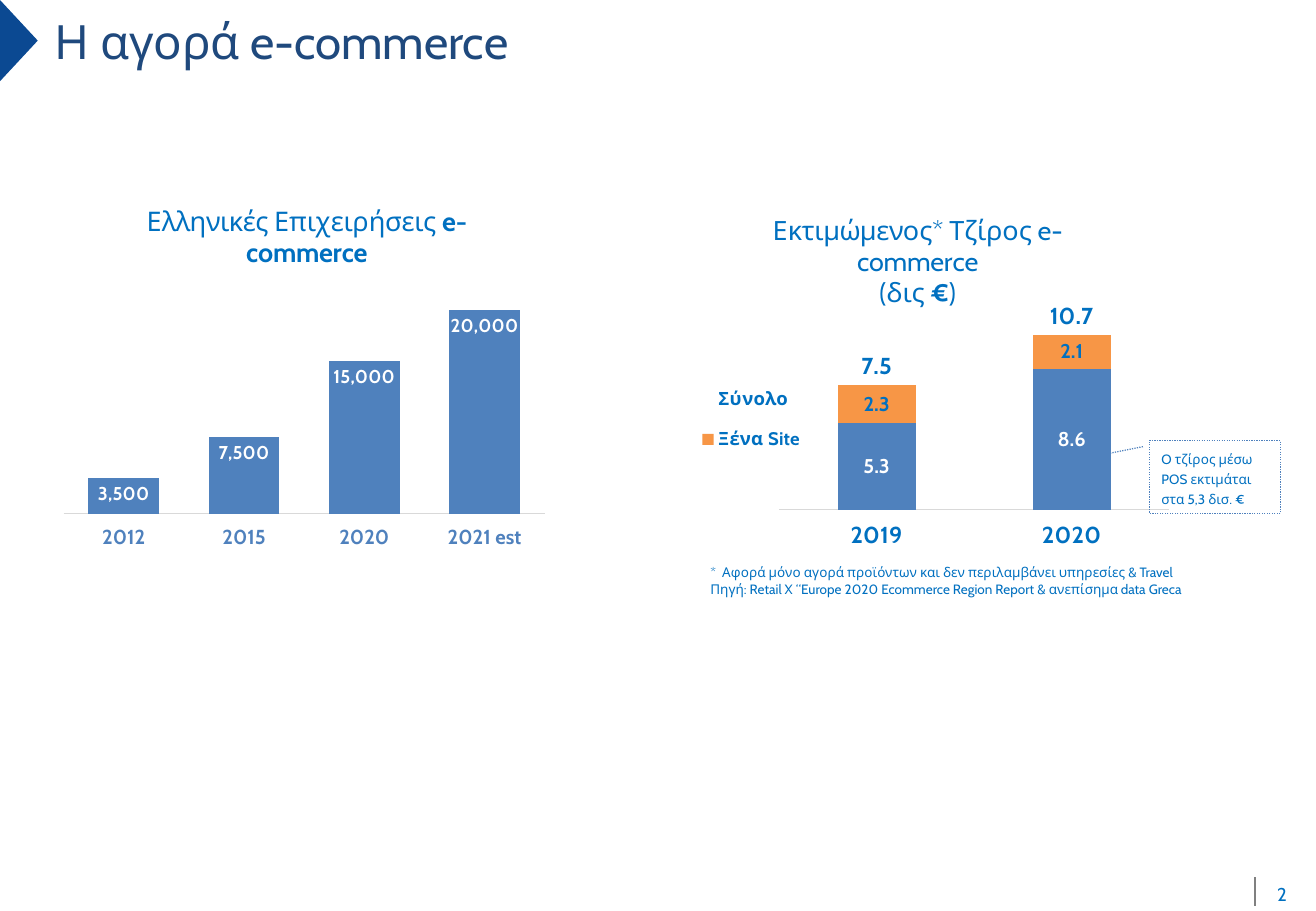
from dataclasses import dataclass

from lxml import etree
from pptx import Presentation
from pptx.chart.data import CategoryChartData
from pptx.dml.color import RGBColor as RGB
from pptx.enum.chart import XL_CHART_TYPE as CT
from pptx.enum.chart import XL_LABEL_POSITION as LABEL
from pptx.enum.chart import XL_LEGEND_POSITION as LEGEND
from pptx.enum.chart import XL_TICK_LABEL_POSITION as TICK_LABEL
from pptx.enum.chart import XL_TICK_MARK as TICK
from pptx.enum.dml import MSO_LINE
from pptx.enum.shapes import MSO_CONNECTOR, MSO_SHAPE
from pptx.enum.text import MSO_ANCHOR, PP_ALIGN
from pptx.oxml.ns import qn
from pptx.util import Cm, Pt


@dataclass(frozen=True)
class Theme:
    font: str = "Cabin"
    navy: RGB = RGB(0x1F, 0x49, 0x7D)
    arrow: RGB = RGB(0x0B, 0x49, 0x92)
    text: RGB = RGB(0x00, 0x70, 0xC0)
    bar: RGB = RGB(0x4F, 0x81, 0xBD)
    orange: RGB = RGB(0xF7, 0x96, 0x46)
    axis: RGB = RGB(0xD9, 0xD9, 0xD9)
    rule: RGB = RGB(0x80, 0x80, 0x80)
    white: RGB = RGB(0xFF, 0xFF, 0xFF)
    title: int = 28
    chart_title: int = 16
    total: int = 14
    category: int = 12
    body: int = 11
    note: int = 8


T = Theme()


def style(font, size, color, bold=False):
    font.name, font.size, font.bold = T.font, Pt(size), bold
    font.color.rgb = color


def add_text(s, box, lines, size, color, align=PP_ALIGN.LEFT, insets=True):
    tf = s.shapes.add_textbox(*map(Cm, box)).text_frame
    tf.word_wrap = True
    if not insets:
        tf.margin_left = tf.margin_top = tf.margin_right = tf.margin_bottom = 0
    for i, line in enumerate(lines):
        p = tf.paragraphs[0] if i == 0 else tf.add_paragraph()
        p.text, p.alignment = line, align
        style(p.font, size, color)


def place(part, inner=False, **fractions):
    """Give a chart part a manual layout in fractions of the chart."""
    for old in part.findall(qn("c:layout")):
        part.remove(old)
    layout = etree.Element(qn("c:layout"))
    manual = etree.SubElement(layout, qn("c:manualLayout"))
    settings = {"layoutTarget": "inner"} if inner else {}
    settings |= {"xMode": "edge", "yMode": "edge"} | fractions
    for name, value in settings.items():
        etree.SubElement(manual, qn(f"c:{name}")).set("val", str(value))
    overlay = part.find(qn("c:overlay"))
    if overlay is None:
        part.insert(0, layout)
    else:
        overlay.addprevious(layout)


def add_columns(s, box, kind, categories, series, title, fmt, gap, plot_box, axis_font):
    """Add a column chart; series rows are name, values, fill, label size, label colour, label position."""
    data = CategoryChartData()
    data.categories = categories
    for name, values, *_ in series:
        data.add_series(name, values)
    chart = s.shapes.add_chart(kind, *map(Cm, box), data).chart
    style(chart.font, T.body, T.text)
    chart.has_legend = False

    chart.has_title = True
    tf = chart.chart_title.text_frame
    for i, runs in enumerate(title):
        p = tf.paragraphs[0] if i == 0 else tf.add_paragraph()
        for text, bold in runs:
            r = p.add_run()
            r.text = text
            style(r.font, T.chart_title, T.text, bold)

    axis = chart.category_axis
    axis.major_tick_mark = axis.minor_tick_mark = TICK.NONE
    axis.tick_label_position = TICK_LABEL.LOW
    axis.format.line.color.rgb, axis.format.line.width = T.axis, Pt(0.75)
    style(axis.tick_labels.font, *axis_font, bold=True)
    chart.value_axis.visible = False
    chart.value_axis.has_major_gridlines = False
    chart.value_axis.minimum_scale = 0

    plot = chart.plots[0]
    plot.gap_width, plot.vary_by_categories = gap, False
    for ser, (_, _, fill, size, color, position) in zip(plot.series, series):
        if fill is None:
            ser.format.fill.background()
        else:
            ser.format.fill.solid()
            ser.format.fill.fore_color.rgb = fill
        labels = ser.data_labels
        labels.show_value = True
        labels.number_format, labels.number_format_is_linked = fmt, False
        style(labels.font, size, color, bold=True)
        if position is not None:
            labels.position = position
    x, y, w, h = plot_box
    plot_area = chart.element.find(qn("c:chart")).find(qn("c:plotArea"))
    place(plot_area, inner=True, x=x, y=y, w=w, h=h)
    return chart


def header(s, box):
    left, top, width, height = box
    builder = s.shapes.build_freeform(Cm(left), Cm(top))
    builder.add_line_segments([(Cm(left), Cm(top + height)),
                               (Cm(left + 0.79), Cm(top + height / 2))])
    sp = builder.convert_to_shape()
    sp.shadow.inherit = False
    sp.fill.solid()
    sp.fill.fore_color.rgb = T.arrow
    sp.line.fill.background()
    add_text(s, (left + 1.14, top + 0.26, width - 1.14, 1.24),
             ["Η αγορά e-commerce"], T.title, T.navy, insets=False)


def businesses(s, box):
    add_columns(
        s, box, CT.COLUMN_CLUSTERED, ["2012", "2015", "2020", "2021 est"],
        [("Series 1", [3500, 7500, 15000, 20000], T.bar, T.body, T.white, LABEL.INSIDE_END)],
        [[("Ελληνικές Επιχειρήσεις ", False), ("e-commerce", True)]],
        "#,##0", 70, (0.04, 0.2, 0.91, 0.7), (T.category, T.bar))


def turnover(s, box):
    left, top, width, height = box
    chart = add_columns(
        s, box, CT.COLUMN_STACKED, ["2019", "2020"],
        [("Series 1", [5.3, 8.6], T.bar, T.category, T.white, None),
         ("Ξένα Site", [2.3, 2.1], T.orange, T.category, T.text, None),
         ("Σύνολο", [7.5, 10.7], None, T.total, T.text, LABEL.INSIDE_BASE)],
        [[("Εκτιμώμενος* Τζίρος e-commerce", False)],
         [("(δις ", False), ("€", True), (")", False)]],
        "#,##0.0", 150, (0.2, 0.23, 0.77, 0.67), (T.total, T.text))
    chart.plots[0].overlap = 100
    chart.value_axis.maximum_scale = 14
    place(chart.chart_title._element, x=0.18, y=0.02)

    chart.has_legend = True
    legend = chart.legend
    legend.position, legend.include_in_layout = LEGEND.LEFT, False
    style(legend.font, T.body, T.text, bold=True)
    entry = etree.Element(qn("c:legendEntry"))
    etree.SubElement(entry, qn("c:idx")).set("val", "0")
    etree.SubElement(entry, qn("c:delete")).set("val", "1")
    legend._element.find(qn("c:legendPos")).addnext(entry)
    place(legend._element, x=0.02, y=0.49, w=0.25, h=0.29)

    add_text(s, (left + 0.43, top + height + 0.18, 10.8, 0.94),
             ["*  Αφορά μόνο αγορά προϊόντων και δεν περιλαμβάνει υπηρεσίες & Travel",
              "Πηγή: Retail X “Europe 2020 Ecommerce Region Report & ανεπίσημα data Greca"],
             T.note, T.text)
    callout(s, (left + 9.86, top + 4.98, 2.74, 1.52))


def callout(s, box):
    sp = s.shapes.add_shape(MSO_SHAPE.LINE_CALLOUT_1, *map(Cm, box))
    sp.shadow.inherit = False
    for i, value in enumerate((0.08, -0.05, 0.23, -0.47)):
        sp.adjustments[i] = value
    sp.fill.background()
    sp.line.color.rgb, sp.line.width = T.bar, Pt(0.75)
    sp.line.dash_style = MSO_LINE.ROUND_DOT
    tf = sp.text_frame
    tf.word_wrap, tf.vertical_anchor = True, MSO_ANCHOR.MIDDLE
    p = tf.paragraphs[0]
    p.text = "O τζίρος μέσω POS εκτιμάται στα 5,3 δισ. €"
    p.alignment, p.line_spacing = PP_ALIGN.LEFT, 1.25
    style(p.font, T.note, T.text)


def page_number(s, box):
    left, top, width, height = box
    rule = s.shapes.add_connector(MSO_CONNECTOR.STRAIGHT, Cm(left), Cm(top),
                                  Cm(left), Cm(top + 0.61))
    etree.SubElement(rule._element.spPr, qn("a:effectLst"))
    rule.line.color.rgb, rule.line.width = T.rule, Pt(1)
    add_text(s, box, ["2"], T.body, T.text, PP_ALIGN.RIGHT)


def main():
    prs = Presentation()
    prs.slide_width, prs.slide_height = Cm(27.51), Cm(19.05)
    s = prs.slides.add_slide(prs.slide_layouts[6])
    header(s, (0, 0, 18.8, 1.7))
    businesses(s, (0.89, 3.89, 11.05, 7.62))
    turnover(s, (14.17, 4.24, 10.59, 7.26))
    page_number(s, (26.24, 18.34, 0.91, 0.74))
    prs.save("out.pptx")


if __name__ == "__main__":
    main()
